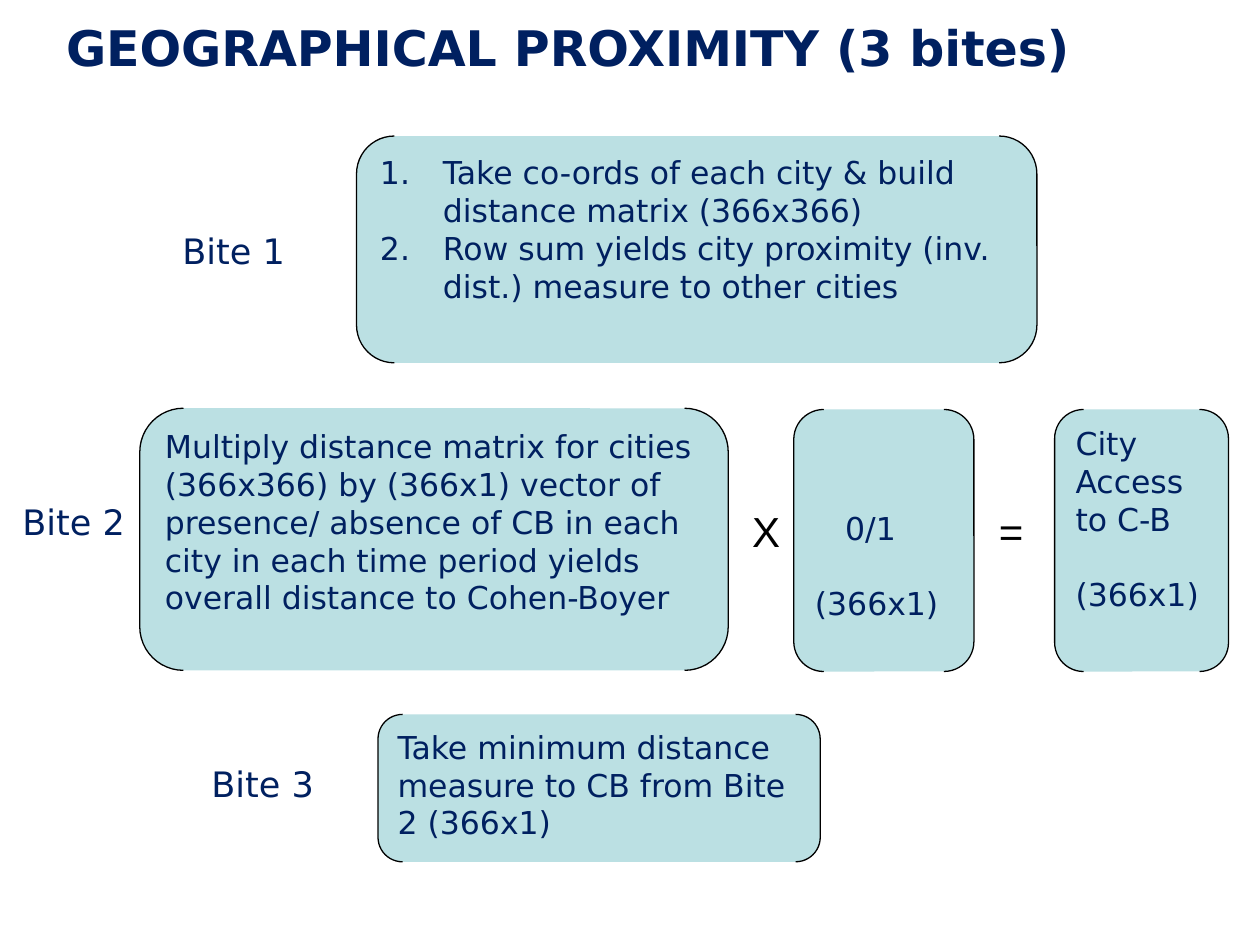
from pptx import Presentation
from pptx.dml.color import RGBColor
from pptx.enum.shapes import MSO_SHAPE as SHP
from pptx.enum.text import MSO_ANCHOR as ANC, MSO_AUTO_SIZE as FIT, PP_ALIGN as AL
from pptx.oxml.ns import qn
from pptx.util import Inches, Pt
from lxml.etree import SubElement

NAVY, TEAL, BLACK = "002060", "BBE0E3", "000000"
SANS = "DejaVu Sans"

prs = Presentation()
prs.slide_width, prs.slide_height = Inches(10), Inches(7.5)
s = prs.slides.add_slide(prs.slide_layouts[5])


def rgb(hex_color):
    return RGBColor.from_string(hex_color)


def write(sp, lines, size, color=NAVY, font=SANS, align=AL.LEFT, bold=False):
    """Fill the shape with one paragraph per line and return the paragraphs."""
    tf = sp.text_frame
    tf.text = "\n".join(lines)
    for p in tf.paragraphs:
        p.alignment = align
        for r in p.runs:
            for key, value in {"name": font, "size": Pt(size), "bold": bold}.items():
                setattr(r.font, key, value)
            r.font.color.rgb = rgb(color)
    return tf.paragraphs


# Positions are percentages of the slide: left, top, width, height
W, H = prs.slide_width / 100, prs.slide_height / 100

title = s.shapes.title
frame = {"left": 1.7 * W, "top": 1.07 * H, "width": 86.7 * W, "height": 7.73 * H}
for key, value in frame.items():
    setattr(title, key, int(value))
title.text_frame.vertical_anchor = ANC.MIDDLE
title.text_frame.auto_size = FIT.NONE
write(title, ["GEOGRAPHICAL PROXIMITY (3 bites)"], 28, align=AL.CENTER, bold=True)

boxes = {
    "steps": (28.3, 14.4, 54, 24, [
        "Take co-ords of each city & build distance matrix (366x366)",
        "Row sum yields city proximity (inv. dist.) measure to other cities"]),
    "product": (11.1, 43.2, 46.7, 27.73, [
        "Multiply distance matrix for cities (366x366) by (366x1) vector of "
        "presence/ absence of CB in each city in each time period yields "
        "overall distance to Cohen-Boyer"]),
    "vector": (63, 43.33, 14.3, 27.73, ["0/1", "(366x1)"]),
    "access": (83.7, 43.33, 13.8, 27.73, ["City", "Access to C-B", "(366x1)"]),
    "minimum": (30, 75.6, 35.1, 15.6, [
        "Take minimum distance measure to CB from Bite 2 (366x1)"]),
}
paragraphs = {}
for name, (x, y, w, h, lines) in boxes.items():
    sp = s.shapes.add_shape(SHP.DOUBLE_BRACKET, int(x * W), int(y * H), int(w * W), int(h * H))
    sp.shadow.inherit = False
    sp.fill.solid()
    sp.fill.fore_color.rgb = rgb(TEAL)
    sp.line.color.rgb = rgb(BLACK)
    sp.line.width = Pt(0.75)
    tf = sp.text_frame
    tf.word_wrap = True
    tf.vertical_anchor = ANC.TOP
    if name == "vector":
        tf.margin_top = int(9.6 * H)
    paragraphs[name] = write(sp, lines, 18)

for p in paragraphs["steps"]:
    pPr = p._p.get_or_add_pPr()
    pPr.set("marL", str(int(5 * W)))
    pPr.set("indent", str(int(-5 * W)))
    SubElement(pPr, qn("a:buAutoNum"), type="arabicPeriod")
paragraphs["vector"][0]._p.get_or_add_pPr().set("marL", str(int(2.4 * W)))
for name in ("vector", "access"):
    paragraphs[name][-1].space_before = Pt(21.5)

bite = (10.3, 5.87, 20, NAVY, SANS)
sign = (4.2, 6.67, 24, BLACK, "Arial")
labels = [
    ("Bite 1", 13.5, 23.6, bite),
    ("Bite 2", 0.8, 52.27, bite),
    ("Bite 3", 15.8, 80, bite),
    ("X", 58.7, 52.8, sign),
    ("=", 78.3, 52.8, sign),
]
for text, x, y, (w, h, size, color, font) in labels:
    sp = s.shapes.add_textbox(int(x * W), int(y * H), int(w * W), int(h * H))
    sp.text_frame.word_wrap = False
    sp.text_frame.auto_size = FIT.SHAPE_TO_FIT_TEXT
    write(sp, [text], size, color, font)

prs.save("out.pptx")
